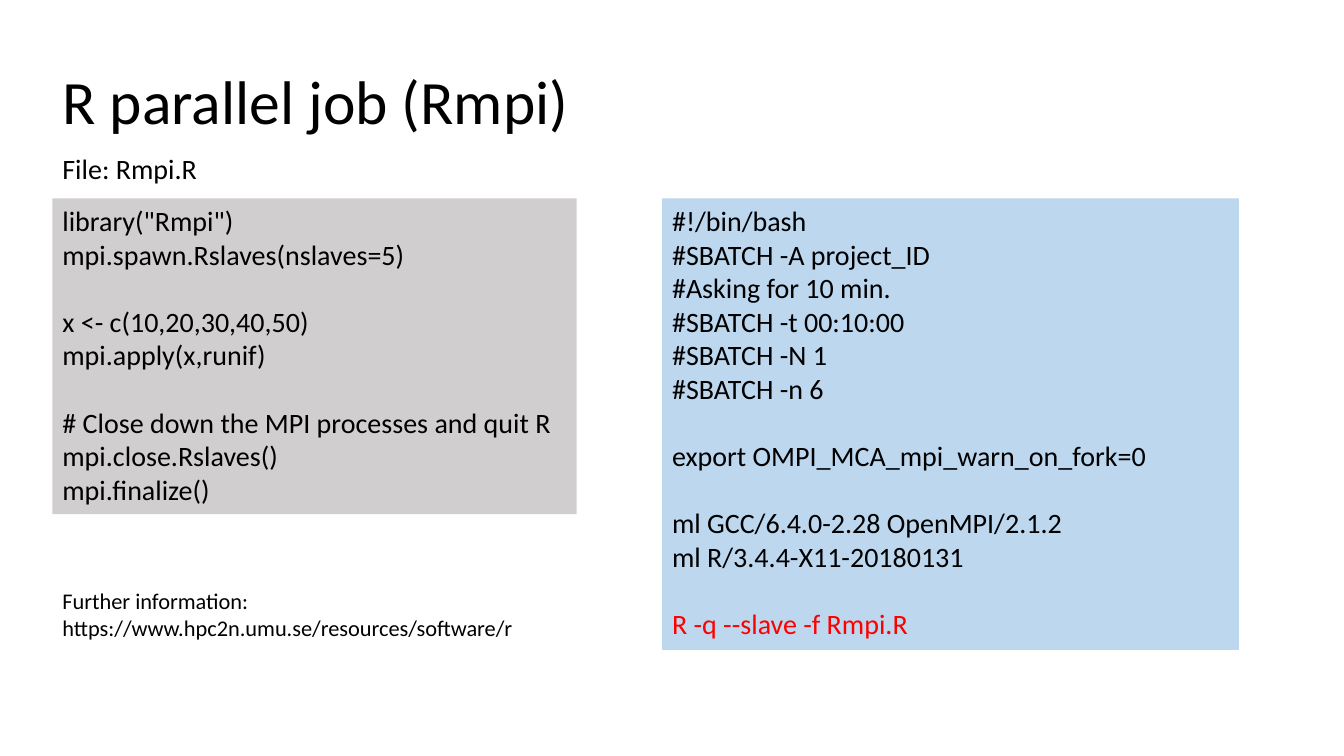
"""Build the slide on running a parallel R job with Rmpi."""
from pptx import Presentation
from pptx.dml.color import RGBColor
from pptx.enum import text
from pptx.util import Pt

BLACK = RGBColor(0x00, 0x00, 0x00)
RED = RGBColor(0xFF, 0x00, 0x00)
GREY = RGBColor(0xD0, 0xCE, 0xCE)
BLUE = RGBColor(0xBD, 0xD7, 0xEE)
FONT = "Calibri"
LEFT = 37.5
CODE_TOP = 141.75

R_CODE = """library("Rmpi")
mpi.spawn.Rslaves(nslaves=5)

x <- c(10,20,30,40,50)
mpi.apply(x,runif)

# Close down the MPI processes and quit R
mpi.close.Rslaves()
mpi.finalize()"""

BATCH_CODE = """#!/bin/bash
#SBATCH -A project_ID
#Asking for 10 min.
#SBATCH -t 00:10:00
#SBATCH -N 1
#SBATCH -n 6

export OMPI_MCA_mpi_warn_on_fork=0

ml GCC/6.4.0-2.28 OpenMPI/2.1.2
ml R/3.4.4-X11-20180131

R -q --slave -f Rmpi.R"""

prs = Presentation()
prs.slide_width, prs.slide_height = Pt(960), Pt(540)
s = prs.slides.add_slide(prs.slide_layouts[5])


def style(p, size):
    p.font.name = FONT
    p.font.size = Pt(size)
    p.font.color.rgb = BLACK


def add_text(content, left, top, width, height, size=20, fill=None):
    sp = s.shapes.add_textbox(Pt(left), Pt(top), Pt(width), Pt(height))
    if fill is not None:
        sp.fill.solid()
        sp.fill.fore_color.rgb = fill
    tf = sp.text_frame
    tf.word_wrap = True
    tf.auto_size = text.MSO_AUTO_SIZE.SHAPE_TO_FIT_TEXT
    tf.text = content
    for p in tf.paragraphs:
        style(p, size)
    return tf


title = s.shapes.title
title.left, title.top, title.width, title.height = Pt(LEFT), Pt(31.5), Pt(488), Pt(86.5)
tf = title.text_frame
tf.text = "R parallel job (Rmpi)"
tf.auto_size = text.MSO_AUTO_SIZE.NONE
tf.vertical_anchor = text.MSO_ANCHOR.MIDDLE
p = tf.paragraphs[0]
p.alignment = text.PP_ALIGN.LEFT
p.line_spacing = 0.9
style(p, 44)

add_text("Further information: https://www.hpc2n.umu.se/resources/software/r",
         LEFT, 416, 394, 46, size=16)
add_text(R_CODE, LEFT, CODE_TOP, 374.5, 225.5, fill=GREY)
batch = add_text(BATCH_CODE, 473, CODE_TOP, 412, 322.5, fill=BLUE)
batch.paragraphs[-1].font.color.rgb = RED
add_text("File: Rmpi.R", LEFT, 105, 180, 31.5)

prs.save("out.pptx")
